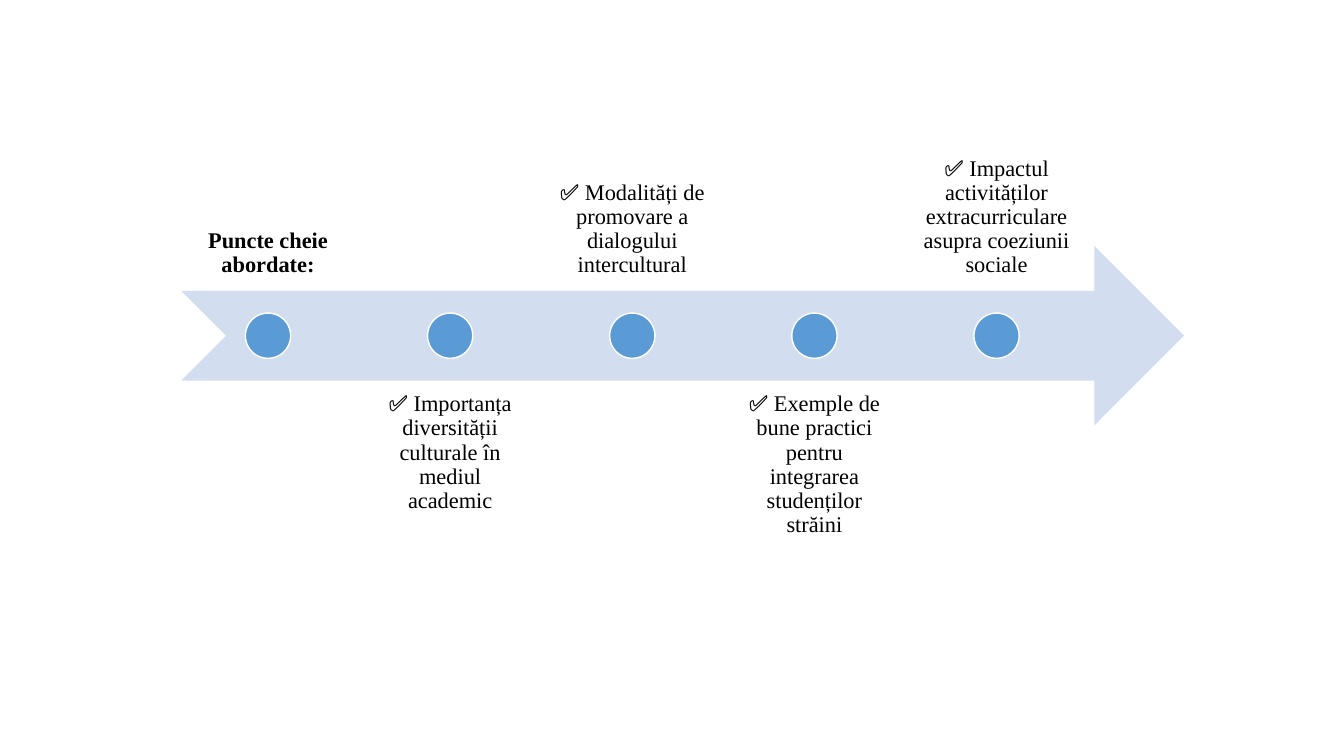
from pptx import Presentation
from pptx.dml.color import RGBColor
from pptx.enum.shapes import MSO_SHAPE as Preset
from pptx.enum.text import MSO_ANCHOR as Anchor, PP_ALIGN as Align
from pptx.util import Cm, Pt

ARROW_LEFT, ARROW_TOP, ARROW_WIDTH, ARROW_HEIGHT = 4.57, 6.2, 25.27, 4.52
LABEL_WIDTH, LABEL_STEP = 4.37, 4.59
LABEL_ABOVE, LABEL_BELOW = 2.79, 9.58
DOT_SIZE = 1.14
INSET = 0.31

KEY_POINTS = [
    "Puncte cheie abordate:",
    "✅ Importanța diversității culturale în mediul academic",
    "✅ Modalități de promovare a dialogului intercultural",
    "✅ Exemple de bune practici pentru integrarea studenților străini",
    "✅ Impactul activităților extracurriculare asupra coeziunii sociale",
]


def color(hex_value):
    return RGBColor.from_string(hex_value)


def set_format(target, values):
    for name, value in values.items():
        setattr(target, name, value)


def add_filled(timeline, preset, left, top, width, height, fill, outline=None):
    figure = timeline.shapes.add_shape(preset, Cm(left), Cm(top), Cm(width), Cm(height))
    figure.shadow.inherit = False
    figure.fill.solid()
    figure.fill.fore_color.rgb = color(fill)
    if outline:
        figure.line.color.rgb = color(outline)
        figure.line.width = Pt(1)
    else:
        figure.line.fill.background()


def add_label(timeline, words, left, top, anchor, bold):
    label = timeline.shapes.add_textbox(Cm(left), Cm(top), Cm(LABEL_WIDTH), Cm(ARROW_HEIGHT))
    frame = label.text_frame
    margins = {f"margin_{side}": Cm(INSET) for side in ("left", "top", "right", "bottom")}
    set_format(frame, {"word_wrap": True, "vertical_anchor": anchor, **margins})
    paragraph = frame.paragraphs[0]
    set_format(paragraph, {"alignment": Align.CENTER, "line_spacing": 0.9})
    run = paragraph.add_run()
    run.text = words
    set_format(run.font, {"name": "Times New Roman", "size": Pt(16), "bold": bold})
    run.font.color.rgb = color("000000")


def add_key_point(timeline, index, words):
    left = ARROW_LEFT + index * LABEL_STEP
    if index % 2:
        top, anchor = LABEL_BELOW, Anchor.TOP
    else:
        top, anchor = LABEL_ABOVE, Anchor.BOTTOM
    add_label(timeline, words, left, top, anchor, bold=index == 0)
    dot_left = left + (LABEL_WIDTH - DOT_SIZE) / 2
    dot_top = ARROW_TOP + (ARROW_HEIGHT - DOT_SIZE) / 2
    add_filled(timeline, Preset.OVAL, dot_left, dot_top, DOT_SIZE, DOT_SIZE, "5B9BD5", "FFFFFF")


def main():
    deck = Presentation()
    set_format(deck, {"slide_width": Cm(33.87), "slide_height": Cm(19.05)})
    slide = deck.slides.add_slide(deck.slide_layouts[6])
    timeline = slide.shapes.add_group_shape()
    add_filled(timeline, Preset.NOTCHED_RIGHT_ARROW, ARROW_LEFT, ARROW_TOP,
               ARROW_WIDTH, ARROW_HEIGHT, "D2DEEF")
    for index, words in enumerate(KEY_POINTS):
        add_key_point(timeline, index, words)
    deck.save("out.pptx")


if __name__ == "__main__":
    main()
